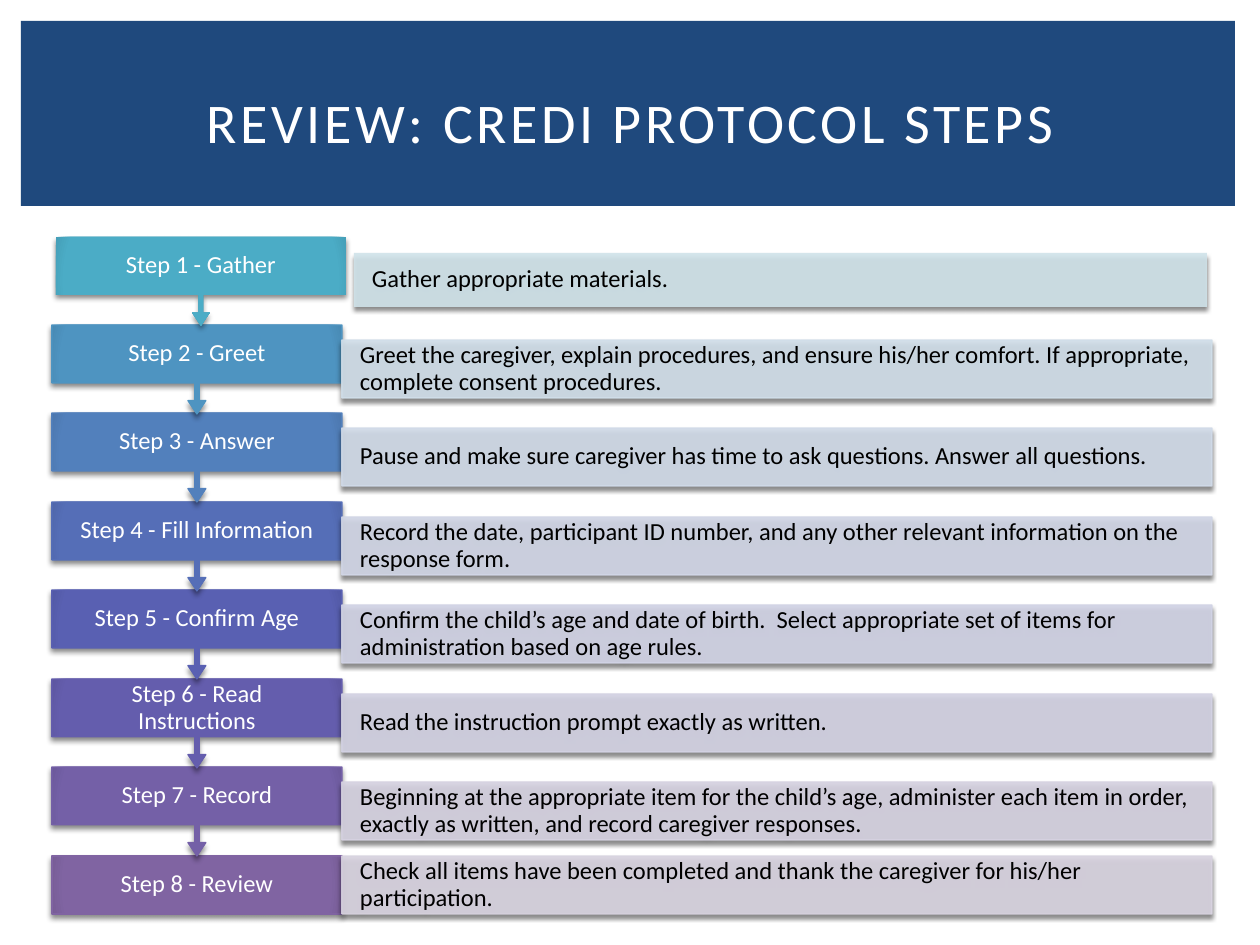
"""Build the protocol review slide with eight linked steps."""
from lxml import etree
from pptx import Presentation
from pptx import util as u
from pptx.dml.color import RGBColor
from pptx.enum import shapes, text
from pptx.oxml import ns

NAVY = RGBColor(0x1F, 0x49, 0x7D)
WHITE = RGBColor(0xFF, 0xFF, 0xFF)
BLACK = RGBColor(0, 0, 0)
TINTS = [RGBColor.from_string(c) for c in (
    "4BACC6", "4E94C1", "5280BC", "556EB7",
    "5960B2", "645DAD", "7460A7", "8064A2")]
PALES = [RGBColor.from_string(c) for c in (
    "D0E3EA", "D0DEE9", "D0DAE8", "D1D6E6",
    "D1D3E5", "D3D2E3", "D6D2E1", "D8D3E0")]
STEPS = [
    ("Gather", "Gather appropriate materials."),
    ("Greet", "Greet the caregiver, explain procedures, and ensure his/her "
     "comfort. If appropriate, complete consent procedures."),
    ("Answer", "Pause and make sure caregiver has time to ask questions. "
     "Answer all questions."),
    ("Fill Information", "Record the date, participant ID number, and any "
     "other relevant information on the response form."),
    ("Confirm Age", "Confirm the child’s age and date of birth.  Select "
     "appropriate set of items for administration based on age rules."),
    ("Read Instructions", "Read the instruction prompt exactly as written."),
    ("Record", "Beginning at the appropriate item for the child’s age, "
     "administer each item in order, exactly as written, and record "
     "caregiver responses."),
    ("Review", "Check all items have been completed and thank the caregiver "
     "for his/her participation."),
]
TOP, SPAN, HIGH = 237, 619, 58
BOX = shapes.MSO_SHAPE.RECTANGLE
CALL = shapes.MSO_SHAPE.DOWN_ARROW_CALLOUT


def px(n):
    return u.Emu(round(n * 914400 / 126))


def sub(node, tag, **attrs):
    return etree.SubElement(node, ns.qn(tag), attrs)


class Deck:
    """Hold the text style and the current slide."""

    def __init__(self, prs, font="Calibri", size=14):
        self.font, self.size = font, size
        self.slide = prs.slides.add_slide(prs.slide_layouts[5])

    def words(self, shape, line, color, size, align):
        frame = shape.text_frame
        frame.text = line
        frame.word_wrap = True
        frame.vertical_anchor = text.MSO_ANCHOR.MIDDLE
        par = frame.paragraphs[0]
        par.alignment = align
        par.font.name, par.font.size = self.font, u.Pt(size)
        par.font.color.rgb = color
        return par

    def title(self, line, *area):
        head = self.slide.shapes.title
        head.left, head.top, head.width, head.height = map(px, area)
        par = self.words(head, line, WHITE, 32, text.PP_ALIGN.CENTER)
        par.runs[0].font._element.set("spc", "200")

    def block(self, kind, color, *area):
        shape = self.slide.shapes.add_shape(kind, *map(px, area))
        shape.shadow.inherit = False
        shape.fill.solid()
        shape.fill.fore_color.rgb = color
        shape.line.fill.background()
        return shape

    def banner(self, *area):
        shape = self.block(BOX, NAVY, *area)
        self.slide.shapes._spTree.insert(2, shape._element)

    def shade(self, shape, blur, alpha):
        effect = shape._element.spPr.find(ns.qn("a:effectLst"))
        cast = sub(effect, "a:outerShdw", blurRad=str(u.Pt(blur)),
                   dist=str(u.Pt(2)), dir="5400000", rotWithShape="0")
        tone = sub(cast, "a:srgbClr", val="000000")
        sub(tone, "a:alpha", val=str(alpha * 1000))

    def edge(self, shape, color):
        shape.line.color.rgb = color
        shape.line.width = u.Pt(0.79)

    def label(self, shape, line, color, inset, align):
        par = self.words(shape, line, color, self.size, align)
        par.line_spacing = 0.9
        frame = shape.text_frame
        frame.margin_left = frame.margin_right = px(inset)
        frame.margin_top = frame.margin_bottom = 0

    def step(self, kind, line, color, lined, *area):
        shape = self.block(kind, color, *area)
        if kind == CALL:
            for i, ratio in enumerate((0.05, 0.1, 0.15, 0.65)):
                shape.adjustments[i] = ratio
        shape.fill.gradient()
        dark = RGBColor(*(int(c * 0.93) for c in color))
        for stop, tone, spot in zip(shape.fill.gradient_stops,
                                    (color, dark), (0.9, 1)):
            stop.color.rgb, stop.position = tone, spot
        grad = shape._element.spPr.find(ns.qn("a:gradFill"))
        grad.remove(grad.find(ns.qn("a:lin")))
        ring = etree.Element(ns.qn("a:path"), {"path": "circle"})
        sub(ring, "a:fillToRect", **dict.fromkeys("ltrb", "100000"))
        grad.find(ns.qn("a:gsLst")).addnext(ring)
        if lined:
            self.edge(shape, color)
        self.shade(shape, 3, 45)
        self.label(shape, line, WHITE, 20, text.PP_ALIGN.CENTER)

    def note(self, line, color, lined, *area):
        shape = self.block(BOX, color, *area)
        if lined:
            self.edge(shape, color)
        for tone in shape._element.spPr.iter(ns.qn("a:srgbClr")):
            sub(tone, "a:alpha", val="90000")
        self.shade(shape, 2.5, 50)
        self.label(shape, line, BLACK, 18, text.PP_ALIGN.LEFT)


def main():
    prs = Presentation()
    prs.slide_width, prs.slide_height = px(1260), px(945)
    deck = Deck(prs)
    deck.banner(21, 21, 1214, 185)
    deck.title("REVIEW: CREDI PROTOCOL STEPS", 53, 49, 1155, 145)
    last = len(STEPS) - 1
    for i in range(last, -1, -1):
        name, line = STEPS[i]
        top = TOP + i * SPAN // last
        kind, tall, drop = (BOX, HIGH, 0) if i == last else (CALL, 89, 15)
        left = 52 if i else 56
        deck.step(kind, f"Step {i + 1} - {name}", TINTS[i], i > 0,
                  left, top, 290, tall)
        area = (342, top + drop, 870, HIGH) if i else (354, 253, 853, 54)
        deck.note(line, PALES[i], i > 0, *area)
    prs.save("out.pptx")


if __name__ == "__main__":
    main()
